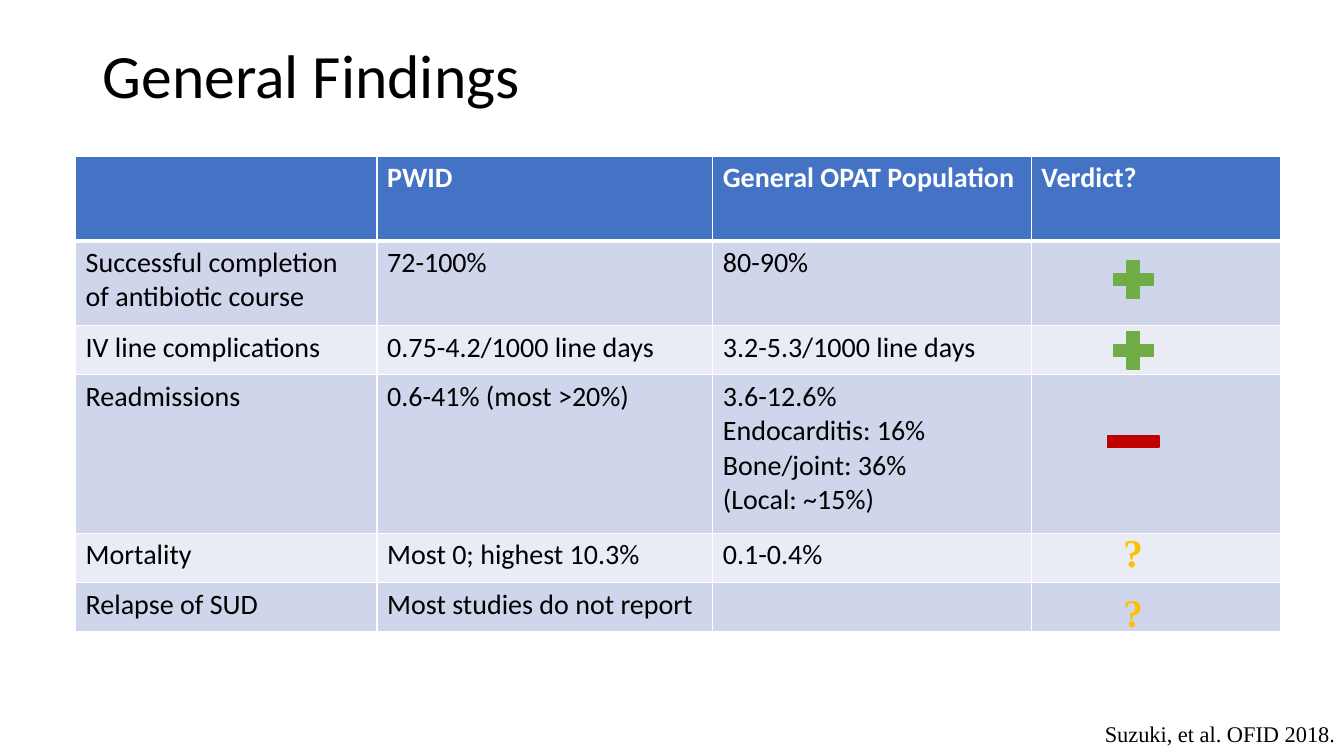
from lxml import etree
from pptx import Presentation
from pptx.dml.color import RGBColor
from pptx.enum.shapes import MSO_SHAPE
from pptx.enum.text import MSO_ANCHOR, PP_ALIGN
from pptx.oxml.ns import qn
from pptx.util import Inches, Pt

LEFT, MID, RIGHT = PP_ALIGN.LEFT, PP_ALIGN.CENTER, PP_ALIGN.RIGHT
TOP = MSO_ANCHOR.TOP
PLUS, MINUS = MSO_SHAPE.MATH_PLUS, MSO_SHAPE.MATH_MINUS

THEME = {
    "sans": "Calibri", "serif": "Times New Roman",
    "title": 44, "body": 20, "note": 16, "mark": 28,
    "ink": "000000", "white": "FFFFFF", "head": "4472C4",
    "bands": ("CFD5EA", "E9EBF5"),
    "good": "70AD47", "bad": "C00000", "open": "FFC000",
}


def add_run(para, text, face, size, color, bold=False):
    run = para.add_run()
    run.text = text
    font = run.font
    font.name, font.size, font.bold = THEME[face], Pt(THEME[size]), bold
    font.color.rgb = RGBColor.from_string(THEME[color])


def add_label(box, text, face, size, color, align, bold=False):
    """Place one line of text in a box of left, top, width, height in inches."""
    frame = slide.shapes.add_textbox(*map(Inches, box)).text_frame
    frame.word_wrap = True
    frame.vertical_anchor = TOP
    para = frame.paragraphs[0]
    para.alignment = align
    add_run(para, text, face, size, color, bold)
    return para


deck = Presentation()
deck.slide_width, deck.slide_height = Inches(13.33), Inches(7.5)
slide = deck.slides.add_slide(deck.slide_layouts[6])

title = add_label((0.92, 0.4, 11.5, 1.45), "General Findings",
                  "sans", "title", "ink", LEFT)
title.line_spacing = 0.9

# Findings table
COLS = (2.99, 3.33, 3.16, 2.47)
ROWS = (0.84, 0.84, 0.49, 1.57, 0.49, 0.49)
FINDINGS = (
    ("", "PWID", "General OPAT Population", "Verdict?"),
    ("Successful completion of antibiotic course", "72-100%", "80-90%", ""),
    ("IV line complications", "0.75-4.2/1000 line days",
     "3.2-5.3/1000 line days", ""),
    ("Readmissions", "0.6-41% (most >20%)",
     "3.6-12.6%\nEndocarditis: 16%\nBone/joint: 36%\n(Local: ~15%)", ""),
    ("Mortality", "Most 0; highest 10.3%", "0.1-0.4%", ""),
    ("Relapse of SUD", "Most studies do not report", "", ""),
)
table = slide.shapes.add_table(
    len(ROWS), len(COLS), Inches(0.75), Inches(1.55),
    Inches(sum(COLS)), Inches(sum(ROWS))).table
for col, width in zip(table.columns, COLS):
    col.width = Inches(width)
for row, height in zip(table.rows, ROWS):
    row.height = Inches(height)

for r, texts in enumerate(FINDINGS):
    head = r == 0
    fill = THEME["head"] if head else THEME["bands"][(r - 1) % 2]
    for c, text in enumerate(texts):
        cell = table.cell(r, c)
        props = cell._tc.get_or_add_tcPr()
        for side in "LRTB":
            thick = (r, side) in ((0, "B"), (1, "T"))
            edge = etree.SubElement(props, qn(f"a:ln{side}"),
                                    w=str(Pt(3 if thick else 1)))
            paint = etree.SubElement(edge, qn("a:solidFill"))
            etree.SubElement(paint, qn("a:srgbClr"), val=THEME["white"])
        cell.fill.solid()
        cell.fill.fore_color.rgb = RGBColor.from_string(fill)
        frame = cell.text_frame
        for n, line in enumerate(text.split("\n") if text else ()):
            para = frame.add_paragraph() if n else frame.paragraphs[0]
            add_run(para, line, "sans", "body",
                    "white" if head else "ink", head)

add_label((9.14, 7.1, 4.2, 0.37), "Suzuki, et al. OFID 2018.",
          "serif", "note", "ink", RIGHT)

# Verdict marks share one centre line
AXIS = 11.24
for kind, top, width, height, tone in (
    (PLUS, 2.52, 0.54, 0.51, "good"),
    (PLUS, 3.22, 0.54, 0.51, "good"),
    (MINUS, 4.15, 0.7, 0.46, "bad"),
):
    mark = slide.shapes.add_shape(kind, Inches(AXIS - width / 2), Inches(top),
                                  Inches(width), Inches(height))
    mark.shadow.inherit = False
    color = RGBColor.from_string(THEME[tone])
    mark.fill.solid()
    mark.fill.fore_color.rgb = color
    mark.line.color.rgb = color
    mark.line.width = Pt(1)

for top in (5.19, 5.79):
    add_label((AXIS - 0.5, top, 1, 0.57), "?",
              "serif", "mark", "open", MID, True)

deck.save("out.pptx")
